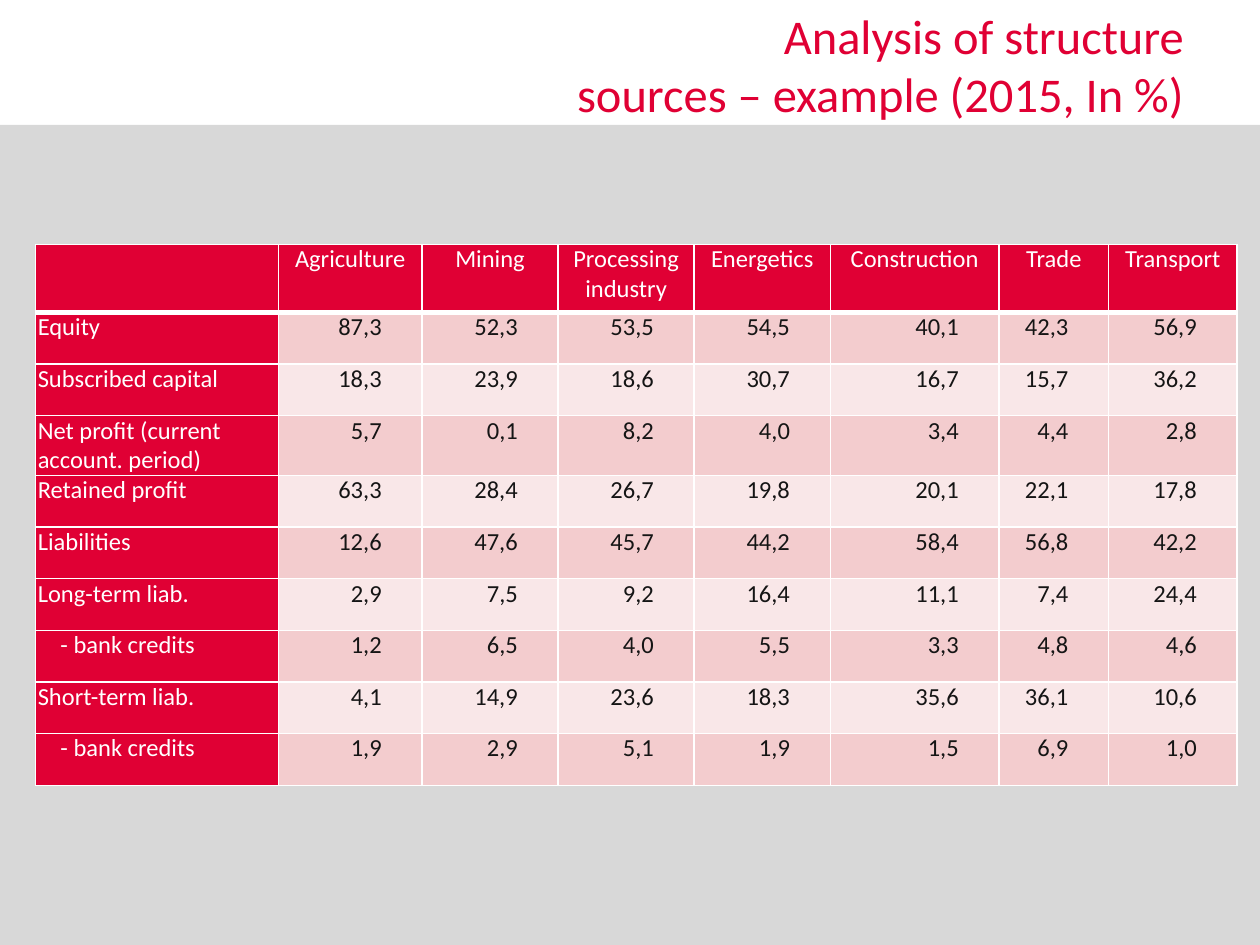
import pptx
import pptx.dml.color
import pptx.enum.shapes
import pptx.enum.text
import pptx.oxml
import pptx.oxml.ns
import pptx.util
from dataclasses import dataclass

Inches = pptx.util.Inches
Align = pptx.enum.text.PP_ALIGN


@dataclass(frozen=True)
class Theme:
    font: str = "Calibri"
    red: str = "E00034"
    white: str = "FFFFFF"
    ink: str = "151515"
    grey: str = "D8D8D8"
    bands: tuple = ("F3CCCE", "F9E7E8")
    title: float = 27.7
    body: float = 14
    line: float = 1
    rule: float = 3


THEME = Theme()
WIDTH, HEIGHT = 10, 7.5
PAD, INDENT, GAP = 0.02, 0.2, 0.32
COLS = [1.93, 1.14, 1.08, 1.08, 1.08, 1.34, 0.87, 1.02]
HEAD_ROW, BODY_ROW = 0.54, 0.41
HEADS = ["", "Agriculture", "Mining", "Processing industry", "Energetics",
         "Construction", "Trade", "Transport"]
ROWS = [
    ("Equity", "87,3 52,3 53,5 54,5 40,1 42,3 56,9"),
    ("Subscribed capital", "18,3 23,9 18,6 30,7 16,7 15,7 36,2"),
    ("Net profit (current account. period)", "5,7 0,1 8,2 4,0 3,4 4,4 2,8"),
    ("Retained profit", "63,3 28,4 26,7 19,8 20,1 22,1 17,8"),
    ("Liabilities", "12,6 47,6 45,7 44,2 58,4 56,8 42,2"),
    ("Long-term liab.", "2,9 7,5 9,2 16,4 11,1 7,4 24,4"),
    ("- bank credits", "1,2 6,5 4,0 5,5 3,3 4,8 4,6"),
    ("Short-term liab.", "4,1 14,9 23,6 18,3 35,6 36,1 10,6"),
    ("- bank credits", "1,9 2,9 5,1 1,9 1,5 6,9 1,0"),
]


def paint(fill, color):
    fill.solid()
    fill.fore_color.rgb = pptx.dml.color.RGBColor.from_string(color)


def style(frame, size, color, align):
    for para in frame.paragraphs:
        para.alignment = align
        for run in para.runs:
            run.font.name = THEME.font
            run.font.size = pptx.util.Pt(size)
            run.font.color.rgb = pptx.dml.color.RGBColor.from_string(color)


def add_band(slide):
    top = HEIGHT * 0.132
    band = slide.shapes.add_shape(
        pptx.enum.shapes.MSO_SHAPE.RECTANGLE,
        0, Inches(top), Inches(WIDTH), Inches(HEIGHT - top))
    band.shadow.inherit = False
    paint(band.fill, THEME.grey)
    band.line.fill.background()
    slide.shapes.element.insert(2, band.element)


def set_title(slide, text):
    title = slide.shapes.title
    title.left, title.top = Inches(2.55), Inches(0.18)
    title.width, title.height = Inches(6.95), Inches(0.66)
    frame = title.text_frame
    frame.text = text
    frame.word_wrap = True
    frame.auto_size = pptx.enum.text.MSO_AUTO_SIZE.NONE
    frame.vertical_anchor = pptx.enum.text.MSO_ANCHOR.MIDDLE
    style(frame, THEME.title, THEME.red, Align.RIGHT)


def add_edges(cell, base):
    props = cell._tc.get_or_add_tcPr()
    for side in "LRTB":
        width = base if side == "B" else THEME.line
        props.append(pptx.oxml.parse_xml(
            f'<a:ln{side} {pptx.oxml.ns.nsdecls("a")} w="{pptx.util.Pt(width)}">'
            f'<a:solidFill><a:srgbClr val="{THEME.white}"/></a:solidFill>'
            f'</a:ln{side}>'))


def fill_cell(cell, text, fill, color, align, left=PAD, right=PAD,
              base=THEME.line):
    cell.margin_left, cell.margin_right = Inches(left), Inches(right)
    cell.margin_top = cell.margin_bottom = 0
    cell.text = text
    style(cell.text_frame, THEME.body, color, align)
    add_edges(cell, base)
    paint(cell.fill, fill)


def add_grid(slide):
    high = HEAD_ROW + BODY_ROW * len(ROWS)
    grid = slide.shapes.add_table(
        len(ROWS) + 1, len(COLS), Inches(0.28), Inches(1.94),
        Inches(sum(COLS)), Inches(high)).table
    for col, width in zip(grid.columns, COLS):
        col.width = Inches(width)
    for index, row in enumerate(grid.rows):
        row.height = Inches(BODY_ROW if index else HEAD_ROW)
    for col, head in enumerate(HEADS):
        fill_cell(grid.cell(0, col), head, THEME.red, THEME.white,
                  Align.CENTER, base=THEME.rule)
    for row, (label, values) in enumerate(ROWS, 1):
        left = INDENT if label.startswith("-") else PAD
        fill_cell(grid.cell(row, 0), label, THEME.red, THEME.white,
                  Align.LEFT, left=left)
        for col, value in enumerate(values.split(), 1):
            fill_cell(grid.cell(row, col), value, THEME.bands[(row - 1) % 2],
                      THEME.ink, Align.RIGHT, right=GAP)


def main():
    deck = pptx.Presentation()
    deck.slide_width, deck.slide_height = Inches(WIDTH), Inches(HEIGHT)
    slide = deck.slides.add_slide(deck.slide_layouts[5])
    paint(slide.background.fill, THEME.white)
    add_band(slide)
    set_title(slide, "Analysis of structure\vsources – example (2015, In %)")
    add_grid(slide)
    deck.save("out.pptx")


if __name__ == "__main__":
    main()
